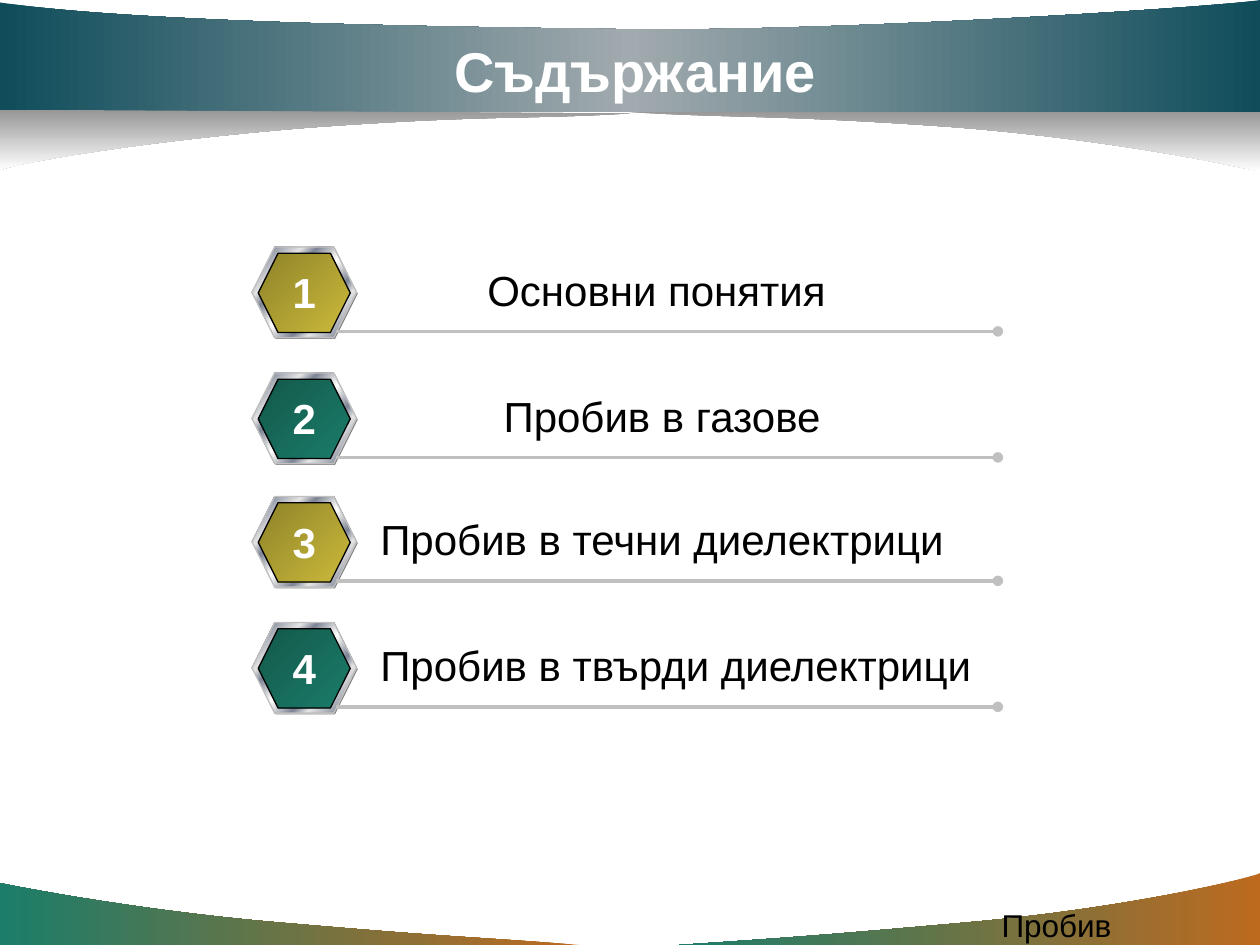
"""Builds a contents slide with four numbered hexagon rows between curved bands."""
from lxml import etree
from pptx import Presentation, util as u
from pptx.dml.color import RGBColor
from pptx.enum import shapes, text
from pptx.oxml.ns import qn

COLUMNS, ROWS = 10, 7.5
COLORS = {
    "white": "FFFFFF", "black": "000000", "rule": "C0C0C0", "shadow": "808080",
    "orange": "BD6A1F", "green": "1B7D6A", "dark_green": "13584A",
    "gold": "CBBA3B", "dark_gold": "8F8329", "teal": "0F4D5B",
    "mist": "A1AAAE", "gray": "969696", "silver": "E6E6E6", "steel": "7D8496",
}
FOOTER = [(0, "orange"), (100, "green")]
HEADER = [(0, "teal"), (50, "mist"), (100, "teal")]
SHADE = [(0, "gray"), (100, "white")]
METAL = [(0, "silver"), (8, "steel"), (26, "silver"), (34, "steel"), (46, "silver"),
         (50, "white"), (54, "silver"), (66, "steel"), (74, "silver"),
         (92, "steel"), (100, "silver")]
GOLD = [(0, "gold"), (100, "dark_gold")]
GREEN = [(0, "green"), (100, "dark_green")]

BANDS = [
    (FOOTER, 180, (4.6, 7.5), [(3.84, 7.44, 3.58, 7.44, 2.32, 7.33),
                               (1.06, 7.23, 0.01, 7.01, 0, 7.01), (0, 7.5)]),
    (FOOTER, 180, (5.39, 7.5), [(6.14, 7.45, 6.46, 7.43, 7.69, 7.32),
                                (8.92, 7.21, 9.9, 6.98, 10, 6.93), (10, 7.5)]),
    (SHADE, 90, (5, 0.89), [(5.84, 0.94, 6.2, 0.91, 7.58, 1.01),
                            (8.97, 1.12, 9.98, 1.36, 10, 1.36), (10, 0.88)]),
    (HEADER, 180, (0, 0.89), [(10, 0.89), (10, 0),
                              (9.64, 0.06, 6.53, 0.26, 4.87, 0.23),
                              (3.21, 0.21, 1.01, 0.17, 0, 0.02)]),
    (SHADE, 90, (5, 0.9), [(4.16, 0.95, 3.88, 0.91, 2.49, 1.01),
                           (1.1, 1.12, 0.11, 1.3, 0, 1.35), (0, 0.87)]),
]
TOPICS = [
    (1.96, "Основни понятия", 4.58, "center", GOLD),
    (2.96, "Пробив в газове", 4.67, "center", GREEN),
    (3.94, "Пробив в течни диелектрици", 5.08, "left", GOLD),
    (4.94, "Пробив в твърди диелектрици", 5.42, "left", GREEN),
]
ALIGN = {"left": text.PP_ALIGN.LEFT, "center": text.PP_ALIGN.CENTER}


class Deck:
    """Holds the style, the grid and the current slide."""

    font = "Arial"

    def __init__(self):
        self.prs = Presentation()
        self.prs.slide_width, self.prs.slide_height = u.Inches(10), u.Inches(7.5)
        self.s = self.prs.slides.add_slide(self.prs.slide_layouts[6])

    def x(self, columns):
        return round(self.prs.slide_width * columns / COLUMNS)

    def y(self, rows):
        return round(self.prs.slide_height * rows / ROWS)

    def box(self, left, top, width, height):
        return self.x(left), self.y(top), self.x(width), self.y(height)

    def color(self, name):
        return RGBColor.from_string(COLORS[name])

    def paint(self, sp, stops, angle):
        sp.shadow.inherit = False
        sp.fill.gradient()
        sp.fill.gradient_angle = (360 - angle) % 360
        gs_list = next(sp.element.iter(qn("a:gsLst")))
        for gs in list(gs_list):
            gs_list.remove(gs)
        for position, name in stops:
            gs = etree.SubElement(gs_list, qn("a:gs"), pos=str(position * 1000))
            etree.SubElement(gs, qn("a:srgbClr"), val=COLORS[name])

    def outline(self, sp, name):
        sp.line.color.rgb = self.color(name)
        sp.line.width = u.Pt(0.75)

    def band(self, stops, angle, start, segments):
        points = [(self.x(px), self.y(py)) for segment in segments
                  for px, py in zip(segment[::2], segment[1::2])]
        builder = self.s.shapes.build_freeform(self.x(start[0]), self.y(start[1]))
        builder.add_line_segments(points, close=True)
        sp = builder.convert_to_shape()
        self.bend(sp, segments)
        self.paint(sp, stops, angle)
        sp.line.fill.background()

    def bend(self, sp, segments):
        lines = iter(list(sp.element.iter(qn("a:lnTo"))))
        for segment in segments:
            first = next(lines)
            if len(segment) == 6:
                first.addprevious(curve := etree.Element(qn("a:cubicBezTo")))
                for line in (first, next(lines), next(lines)):
                    curve.append(line[0])
                    line.getparent().remove(line)

    def badge(self, top, stops):
        group = self.s.shapes.add_group_shape()
        hexagon = shapes.MSO_SHAPE.HEXAGON
        shadow, rim, face = [
            group.shapes.add_shape(hexagon, *self.box(*place)) for place in (
                (2.01, top + 0.01, 0.83, 0.72),
                (2, top, 0.83, 0.72),
                (2.05, top + 0.05, 0.73, 0.63))]
        shadow.shadow.inherit = False
        shadow.fill.solid()
        shadow.fill.fore_color.rgb = self.color("shadow")
        shadow.line.fill.background()
        self.paint(rim, METAL, 225)
        self.outline(rim, "rule")
        self.paint(face, stops, 225)
        self.outline(face, "black")

    def rule(self, left, right, row):
        line = self.s.shapes.add_connector(
            shapes.MSO_CONNECTOR.STRAIGHT,
            self.x(left), self.y(row), self.x(right), self.y(row))
        line.line.color.rgb = self.color("rule")
        line.line.width = u.Pt(2)
        ln = line.element.spPr.find(qn("a:ln"))
        etree.SubElement(ln, qn("a:tailEnd"), type="oval")
        etree.SubElement(line.element.spPr, qn("a:effectLst"))

    def label(self, words, place, size, color="black", align="left", bold=False,
              anchor=text.MSO_ANCHOR.TOP):
        tf = self.s.shapes.add_textbox(*self.box(*place)).text_frame
        tf.word_wrap = True
        tf.vertical_anchor = anchor
        tf.text = words
        p = tf.paragraphs[0]
        p.alignment = ALIGN[align]
        r = p.runs[0]
        r.font.name, r.font.size, r.font.bold = self.font, u.Pt(size), bold
        r.font.color.rgb = self.color(color)

    def topic(self, number, top, words, width, align, stops):
        self.badge(top, stops)
        self.rule(2.67, 7.92, top + 0.67)
        self.label(words, (2.92, top + 0.09, width, 0.5), 24, align=align)
        self.label(str(number), (2.22, top + 0.11, 0.39, 0.5), 24, "white",
                   "center", bold=True)


def main():
    deck = Deck()
    for band in BANDS:
        deck.band(*band)
    deck.label("Пробив", (7.85, 7.14, 2.08, 0.25), 18)
    deck.label("Съдържание", (0.75, 0.25, 8.58, 0.62), 32, "white", "center",
               bold=True, anchor=text.MSO_ANCHOR.MIDDLE)
    for number, topic in enumerate(TOPICS, 1):
        deck.topic(number, *topic)
    deck.prs.save("out.pptx")


if __name__ == "__main__":
    main()
